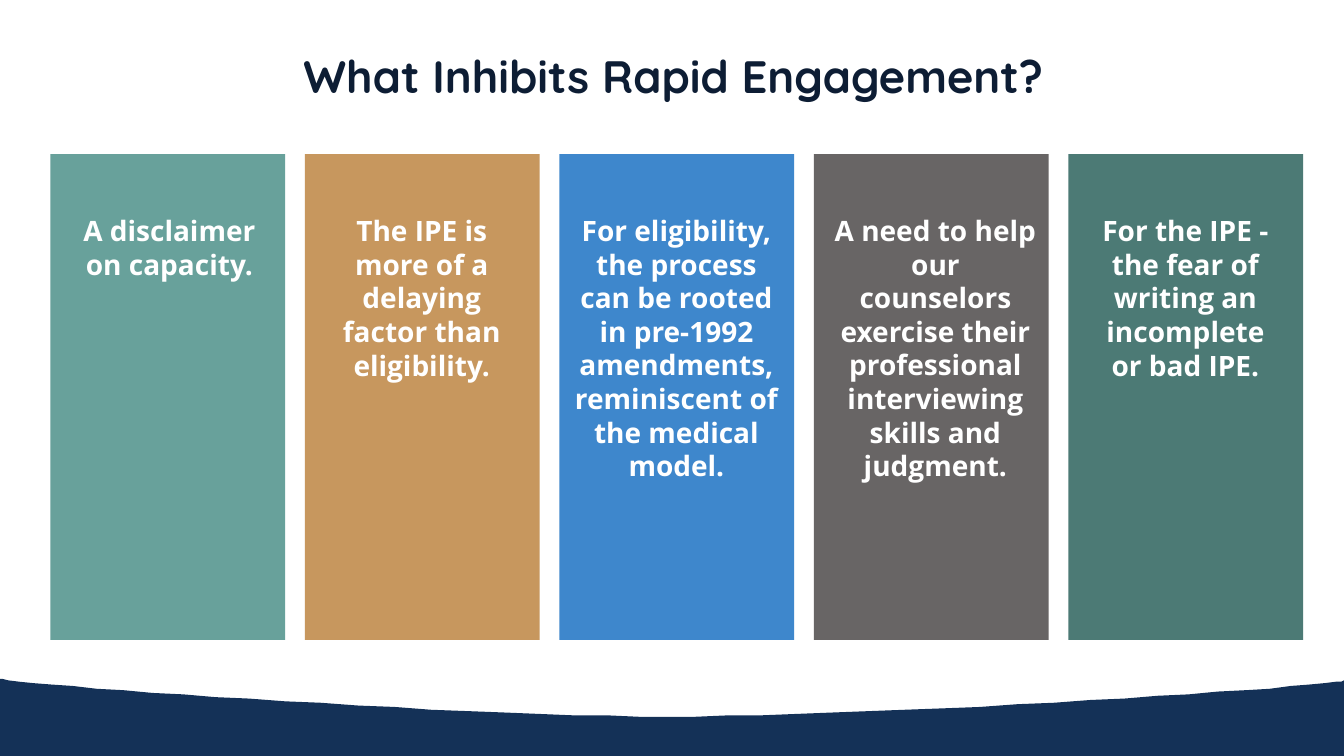
from pptx import Presentation
from pptx.dml.color import RGBColor
from pptx.enum.shapes import MSO_SHAPE as Shape
from pptx.enum.text import MSO_ANCHOR as Anchor, MSO_AUTO_SIZE as AutoSize, PP_ALIGN as Align
from pptx.util import Pt

COLORS = {
    "navy": "143157", "title": "0D1D34", "white": "FFFFFF",
    "sage": "68A19B", "tan": "C7975E", "blue": "3E87CC",
    "gray": "686565", "teal": "4C7A75",
}
SLIDE_W, SLIDE_H = 960, 540
CURVE_STEPS = 24


def paint(shape, color):
    shape.shadow.inherit = False
    shape.fill.solid()
    shape.fill.fore_color.rgb = RGBColor.from_string(COLORS[color])
    shape.line.fill.background()


def add_text(left, top, width, height, text, font, size, color):
    frame = slide.shapes.add_textbox(Pt(left), Pt(top), Pt(width), Pt(height)).text_frame
    frame.word_wrap = True
    paragraph = frame.paragraphs[0]
    paragraph.text = text
    paragraph.alignment = Align.CENTER
    paragraph.font.name = font
    paragraph.font.size = Pt(size)
    paragraph.font.bold = True
    paragraph.font.color.rgb = RGBColor.from_string(COLORS[color])
    return frame


prs = Presentation()
prs.slide_width, prs.slide_height = Pt(SLIDE_W), Pt(SLIDE_H)
slide = prs.slides.add_slide(prs.slide_layouts[6])

# Footer strip
strip = slide.shapes.add_shape(Shape.RECTANGLE, 0, Pt(535), Pt(SLIDE_W), Pt(5))
paint(strip, "navy")

# Footer wave: cubic curves along the top, then back along the bottom
wave_curves = [
    [(0, 484.6), (0, 488.2), (316.8, 511.2), (476.6, 511.9)],
    [(476.6, 511.9), (637.2, 511.9), (960, 489.6), (960, 486)],
    [(960, 535), (960, 538.6), (745.2, 541.4), (480.2, 541.4)],
    [(480.2, 541.4), (215.3, 541.4), (0, 538.6), (0, 535)],
]
wave_points = []
for curve in wave_curves:
    for step in range(CURVE_STEPS + 1):
        t = step / CURVE_STEPS
        weights = ((1 - t) ** 3, 3 * t * (1 - t) ** 2, 3 * t * t * (1 - t), t ** 3)
        wave_points.append(tuple(
            sum(w * point[axis] for w, point in zip(weights, curve)) for axis in (0, 1)))
outline = slide.shapes.build_freeform(*wave_points[0], scale=Pt(1))
outline.add_line_segments(wave_points[1:], close=True)
paint(outline.convert_to_shape(), "navy")

# Title
title = add_text(57.6, 28.8, 846.7, 49.7, "What Inhibits Rapid Engagement?",
                 "Quicksand", 32.4, "title")
title.vertical_anchor = Anchor.MIDDLE
title.paragraphs[0].line_spacing = 1.02

# Columns: color, text left, text width, line count, text
COLUMN_LEFT, COLUMN_TOP, COLUMN_W, COLUMN_H = 36, 110, 167.6, 347
COLUMN_PITCH = 181.8
LINE_H = 24.2
inhibitors = [
    ("sage", 44, 154, 2, "A disclaimer on capacity."),
    ("tan", 233.3, 136, 5, "The IPE is more of a delaying factor than eligibility."),
    ("blue", 403.2, 160, 8, "For eligibility, the process can be rooted in pre-1992 "
     "amendments, reminiscent of the medical model."),
    ("gray", 588.2, 160, 8, "A need to help our counselors exercise their professional "
     "interviewing skills and judgment."),
    ("teal", 772.6, 148.3, 5, "For the IPE - the fear of writing an incomplete or bad IPE."),
]
for index, (color, text_left, text_width, lines, text) in enumerate(inhibitors):
    column = slide.shapes.add_shape(
        Shape.RECTANGLE, Pt(COLUMN_LEFT + index * COLUMN_PITCH), Pt(COLUMN_TOP),
        Pt(COLUMN_W), Pt(COLUMN_H))
    paint(column, color)
    reason = add_text(text_left, 149, text_width, 7.2 + lines * LINE_H, text,
                      "Open Sans", 20, "white")
    reason.auto_size = AutoSize.SHAPE_TO_FIT_TEXT

prs.save("out.pptx")
